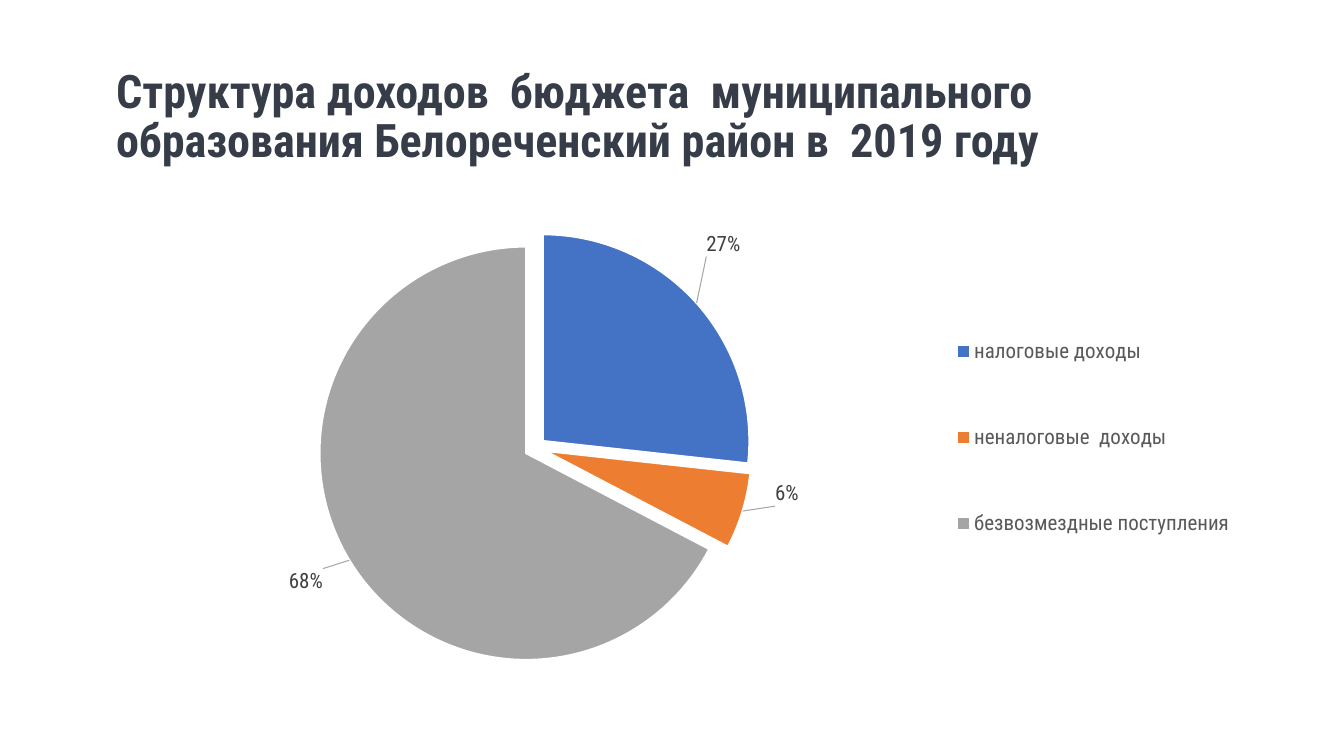
"""Build a slide with an exploded pie chart of municipal budget income."""
from dataclasses import dataclass

import pptx
import pptx.chart.data
import pptx.dml.color
import pptx.enum.chart
import pptx.enum.text
import pptx.oxml
import pptx.oxml.ns
import pptx.util

Cm, Pt = pptx.util.Cm, pptx.util.Pt
FONT = "Roboto Condensed"
NUMBER_FORMAT = '0"%"'


@dataclass
class Income:
    name: str
    percent: int
    fill: str
    label_dx: float
    label_dy: float


INCOMES = [
    Income("налоговые доходы", 27, "4472C4", 0.005, -0.08),
    Income("неналоговые  доходы", 6, "ED7D31", 0.025, -0.06),
    Income("безвозмездные поступления", 68, "A5A5A5", -0.02, 0.01),
]


def rgb(value: str) -> pptx.dml.color.RGBColor:
    return pptx.dml.color.RGBColor.from_string(value)


def chart_xml(tag: str, body: str):
    ns = pptx.oxml.ns.nsdecls("c", "a")
    return pptx.oxml.parse_xml(f"<c:{tag} {ns}>{body}</c:{tag}>")


def manual_layout(modes: str = "", **values: float):
    items = "".join(f'<c:{key} val="{value}"/>' for key, value in values.items())
    return chart_xml("layout", f"<c:manualLayout>{modes}{items}</c:manualLayout>")


def edge_modes(target: str = "") -> str:
    return target + '<c:xMode val="edge"/><c:yMode val="edge"/>'


def format_font(font, size: float, color: str, bold: bool = False) -> None:
    font.name, font.size, font.bold = FONT, Pt(size), bold
    font.color.rgb = rgb(color)


def write_text(tf, text: str, *, size: float, color: str, bold: bool, spacing: float) -> None:
    tf.word_wrap = True
    tf.auto_size = pptx.enum.text.MSO_AUTO_SIZE.NONE
    tf.vertical_anchor = pptx.enum.text.MSO_ANCHOR.MIDDLE
    p = tf.paragraphs[0]
    p.alignment = pptx.enum.text.PP_ALIGN.LEFT
    p.line_spacing = spacing
    r = p.add_run()
    r.text = text
    format_font(r.font, size, color, bold)


def format_slice(point, income: Income) -> None:
    point.format.fill.solid()
    point.format.fill.fore_color.rgb = rgb(income.fill)
    point.format.line.color.rgb = rgb("FFFFFF")
    point.format.line.width = Pt(1.5)
    label = point.data_label
    format_font(label.font, 15, "404040")
    label.position = pptx.enum.chart.XL_LABEL_POSITION.OUTSIDE_END


def format_labels(plot, series) -> None:
    labels = series.data_labels
    labels.show_value = True
    labels.number_format = NUMBER_FORMAT
    labels.number_format_is_linked = False
    labels.position = pptx.enum.chart.XL_LABEL_POSITION.OUTSIDE_END
    format_font(labels.font, 15, "404040")
    for point_index, income in enumerate(INCOMES):
        format_slice(series.points[point_index], income)
    element = series._element.find(pptx.oxml.ns.qn("c:dLbls"))
    for label, income in zip(element.findall(pptx.oxml.ns.qn("c:dLbl")), INCOMES):
        number_format = chart_xml("numFmt", "")
        number_format.set("formatCode", NUMBER_FORMAT)
        number_format.set("sourceLinked", "0")
        label.insert(1, manual_layout(x=income.label_dx, y=income.label_dy))
        label.insert(2, number_format)
    for leader in element.findall(pptx.oxml.ns.qn("c:showLeaderLines")):
        element.remove(leader)
    show = chart_xml("showLeaderLines", "")
    show.set("val", "1")
    element.append(show)
    element.append(chart_xml(
        "leaderLines",
        '<c:spPr><a:ln w="9525"><a:solidFill><a:srgbClr val="A6A6A6"/>'
        "</a:solidFill></a:ln></c:spPr>"))


def add_income_chart(slide) -> None:
    data = pptx.chart.data.CategoryChartData(number_format=NUMBER_FORMAT)
    data.categories = [income.name for income in INCOMES]
    data.add_series("Series 1", [income.percent for income in INCOMES])
    chart = slide.shapes.add_chart(
        pptx.enum.chart.XL_CHART_TYPE.PIE,
        Cm(4.22), Cm(4.6), Cm(26.97), Cm(13.39), data).chart
    chart.has_title = False
    format_font(chart.font, 15, "000000")
    plot = chart.plots[0]
    plot.vary_by_categories = True
    series = plot.series[0]
    format_labels(plot, series)
    explosion = chart_xml("explosion", "")
    explosion.set("val", "5")
    series._element.find(pptx.oxml.ns.qn("c:dPt")).addprevious(explosion)
    for point in series._element.findall(pptx.oxml.ns.qn("c:dPt")):
        slice_explosion = chart_xml("explosion", "")
        slice_explosion.set("val", "5")
        point.find(pptx.oxml.ns.qn("c:spPr")).addprevious(slice_explosion)

    chart.has_legend = True
    legend = chart.legend
    legend.position = pptx.enum.chart.XL_LEGEND_POSITION.RIGHT
    legend.include_in_layout = False
    format_font(legend.font, 15, "595959")
    position = legend._element.find(pptx.oxml.ns.qn("c:legendPos"))
    for layout in legend._element.findall(pptx.oxml.ns.qn("c:layout")):
        legend._element.remove(layout)
    position.addnext(manual_layout(edge_modes(), x=0.73, y=0.18, w=0.27, h=0.6))

    area = chart._chartSpace.chart.plotArea
    for layout in area.findall(pptx.oxml.ns.qn("c:layout")):
        area.remove(layout)
    area.insert(0, manual_layout(
        edge_modes('<c:layoutTarget val="inner"/>'),
        x=0.064, y=0.091, w=0.559, h=0.817))


def main() -> None:
    prs = pptx.Presentation()
    prs.slide_width, prs.slide_height = Cm(33.87), Cm(19.05)
    slide = prs.slides.add_slide(prs.slide_layouts[5])
    title = slide.shapes.title
    title.left, title.top = Cm(2.67), Cm(1.07)
    title.width, title.height = Cm(27.94), Cm(3.81)
    write_text(
        title.text_frame,
        "Структура доходов  бюджета  муниципального  "
        "образования Белореченский район в  2019 году",
        size=33, color="363D48", bold=True, spacing=0.9)
    add_income_chart(slide)
    prs.save("out.pptx")


if __name__ == "__main__":
    main()
